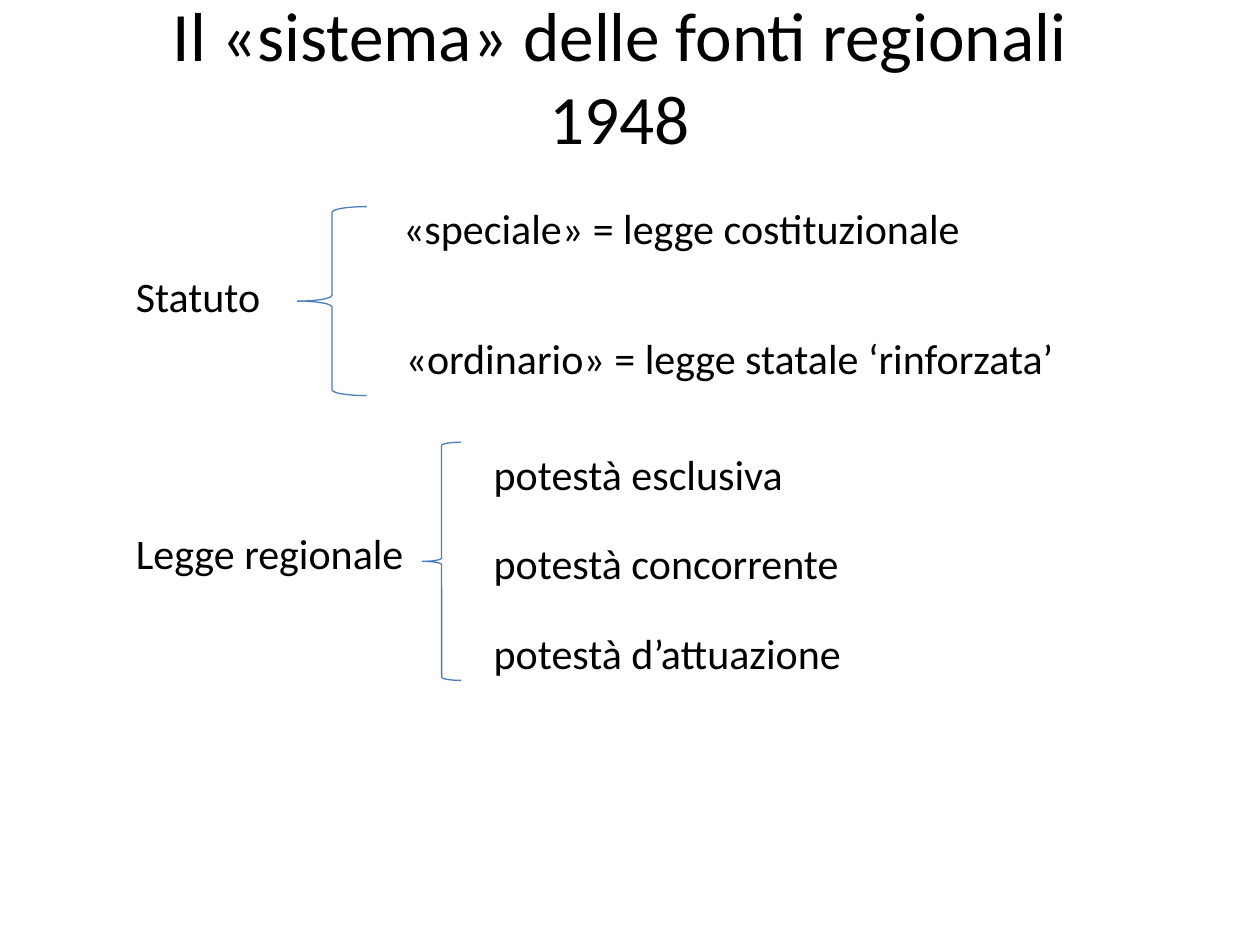
from dataclasses import dataclass

from pptx import Presentation
from pptx.dml.color import RGBColor
from pptx.enum.shapes import MSO_SHAPE
from pptx.enum.text import MSO_ANCHOR, MSO_AUTO_SIZE, PP_ALIGN
from pptx.slide import Slide
from pptx.text.text import TextFrame
from pptx.util import Inches, Pt

LEFT_BRACE = MSO_SHAPE.LEFT_BRACE
MIDDLE = MSO_ANCHOR.MIDDLE
NO_FIT, GROW = MSO_AUTO_SIZE.NONE, MSO_AUTO_SIZE.SHAPE_TO_FIT_TEXT
LEFT, CENTER = PP_ALIGN.LEFT, PP_ALIGN.CENTER

COLORS = {"text": "000000", "brace": "4B7EBC"}
FONT = "Calibri"
COLUMNS, ROWS = 100, 75
PAGE_WIDTH, PAGE_HEIGHT = Inches(10), Inches(7.5)
LABEL_COLUMN = 9.8
LINE_ROWS = 5


@dataclass(frozen=True)
class Area:
    """A rectangle in grid columns and rows."""
    column: float
    row: float
    columns: float
    rows: float = LINE_ROWS

    def lengths(self) -> tuple[int, int, int, int]:
        across, down = PAGE_WIDTH / COLUMNS, PAGE_HEIGHT / ROWS
        return (round(self.column * across), round(self.row * down),
                round(self.columns * across), round(self.rows * down))


@dataclass(frozen=True)
class Entry:
    text: str
    area: Area


@dataclass(frozen=True)
class Source:
    """A source of law, its brace and the kinds it divides into."""
    label: Entry
    brace: Area
    kinds: tuple[Entry, ...]


TITLE = Entry("Il «sistema» delle fonti regionali 1948", Area(6.7, 1.3, 85, 9.4))
SOURCES = (
    Source(
        Entry("Statuto", Area(LABEL_COLUMN, 21, 13.4)),
        Area(23.6, 16.4, 5.5, 15),
        (Entry("«speciale» = legge costituzionale", Area(31, 15.6, 53.5)),
         Entry("«ordinario» = legge statale ‘rinforzata’", Area(31.2, 25.9, 53.5))),
    ),
    Source(
        Entry("Legge regionale", Area(LABEL_COLUMN, 41.4, 24.4)),
        Area(33.5, 35.1, 3.1, 18.9),
        tuple(Entry(f"potestà {kind}", Area(38.2, 35.1 + 7.1 * index, 33.1))
              for index, kind in enumerate(("esclusiva", "concorrente", "d’attuazione"))),
    ),
)


def write(frame: TextFrame, text: str, size: float, alignment: PP_ALIGN) -> None:
    frame.text = text
    frame.word_wrap = True
    para = frame.paragraphs[0]
    para.alignment = alignment
    font = para.runs[0].font
    font.name = FONT
    font.size = Pt(size)
    font.color.rgb = RGBColor.from_string(COLORS["text"])


def fill_title(page: Slide, entry: Entry) -> None:
    title = page.shapes.title
    title.left, title.top, title.width, title.height = entry.area.lengths()
    write(title.text_frame, entry.text, 39.6, CENTER)
    title.text_frame.auto_size = NO_FIT
    title.text_frame.vertical_anchor = MIDDLE


def add_entry(page: Slide, entry: Entry) -> None:
    box = page.shapes.add_textbox(*entry.area.lengths())
    write(box.text_frame, entry.text, 24, LEFT)
    box.text_frame.auto_size = GROW


def add_brace(page: Slide, area: Area) -> None:
    brace = page.shapes.add_shape(LEFT_BRACE, *area.lengths())
    brace.shadow.inherit = False
    brace.fill.background()
    brace.line.color.rgb = RGBColor.from_string(COLORS["brace"])
    brace.line.width = Pt(0.75)


def add_source(page: Slide, source: Source) -> None:
    add_entry(page, source.label)
    add_brace(page, source.brace)
    for kind in source.kinds:
        add_entry(page, kind)


def main() -> None:
    deck = Presentation()
    deck.slide_width, deck.slide_height = PAGE_WIDTH, PAGE_HEIGHT
    page = deck.slides.add_slide(deck.slide_layouts.get_by_name("Title Only"))
    fill_title(page, TITLE)
    for source in SOURCES:
        add_source(page, source)
    deck.save("out.pptx")


if __name__ == "__main__":
    main()
